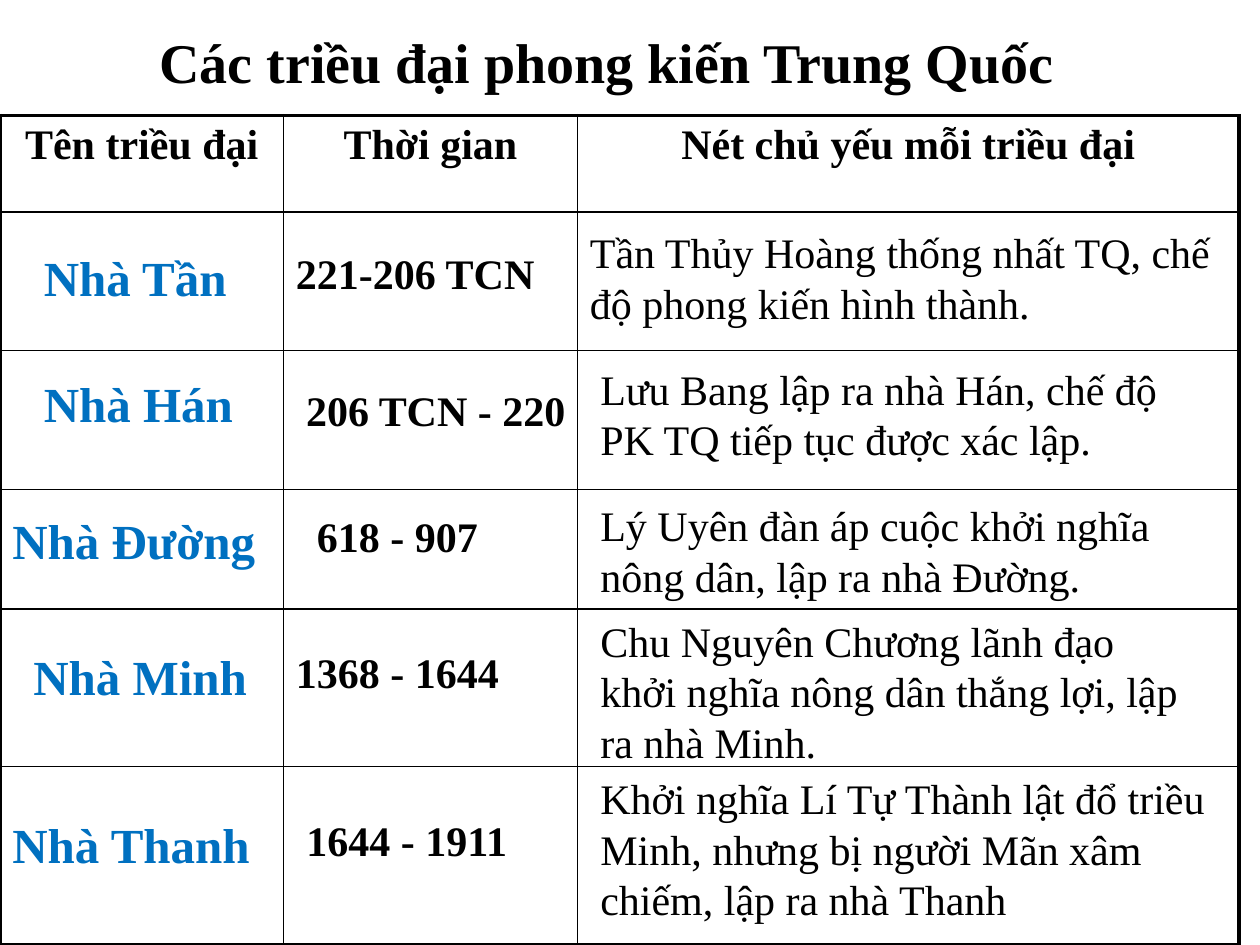
import lxml.etree
import pptx
import pptx.dml.color
import pptx.enum.text
import pptx.oxml.ns
import pptx.util

SCALE = 7620
COLORS = {"black": "000000", "blue": "0070C0"}
FONT = "Times New Roman"
ALIGN = pptx.enum.text.PP_ALIGN
TITLE = {"size": 32, "color": "black", "bold": True}
DYNASTY = {"size": 28, "color": "blue", "bold": True}
STRONG = {"size": 24, "color": "black", "bold": True}
BODY = {"size": 24, "color": "black", "bold": False}

HEADERS = ["Tên triều đại", "Thời gian", "Nét chủ yếu mỗi triều đại"]
COLUMNS = [270, 280, 630]
ROWS = [92, 132, 132, 114, 150, 170]

NAMES = [
    ("Nhà Tần", 30, 230, 230),
    ("Nhà Hán", 30, 350, 240),
    ("Nhà Đường", 0, 480, 290),
    ("Nhà Minh", 20, 610, 250),
    ("Nhà Thanh", 0, 770, 280),
]
PERIODS = [
    ("221-206 TCN", 270, 230, 270, ALIGN.LEFT),
    ("206 TCN - 220", 270, 360, 290, ALIGN.CENTER),
    ("618 - 907", 290, 480, 240, ALIGN.LEFT),
    ("1368 - 1644", 270, 610, 260, ALIGN.LEFT),
    ("1644 - 1911", 280, 770, 240, ALIGN.LEFT),
]
FEATURES = [
    ("Tần Thủy Hoàng thống nhất TQ, chế độ phong kiến hình thành.", 550, 210, 630, 109),
    ("Lưu Bang lập ra nhà Hán, chế độ PK TQ tiếp tục được xác lập.", 560, 340, 610, 109),
    ("Lý Uyên đàn áp cuộc khởi nghĩa nông dân, lập ra nhà Đường.", 560, 470, 610, 109),
    ("Chu Nguyên Chương lãnh đạo khởi nghĩa nông dân thắng lợi, lập ra nhà Minh.",
     560, 580, 590, 157),
    ("Khởi nghĩa Lí Tự Thành lật đổ triều Minh, nhưng bị người Mãn xâm chiếm, lập ra nhà Thanh",
     560, 730, 610, 157),
]


def px(length):
    return pptx.util.Emu(length * SCALE)


def write_text(frame, text, style, align=ALIGN.LEFT):
    para = frame.paragraphs[0]
    para.alignment = align
    span = para.add_run()
    span.text = text
    values = {"name": FONT, "size": pptx.util.Pt(style["size"]), "bold": style["bold"]}
    for name, value in values.items():
        setattr(span.font, name, value)
    span.font.color.rgb = pptx.dml.color.RGBColor.from_string(COLORS[style["color"]])


def add_text(page, text, left, top, width, height, style, align=ALIGN.LEFT):
    box = page.shapes.add_textbox(px(left), px(top), px(width), px(height))
    frame = box.text_frame
    frame.word_wrap = True
    frame.auto_size = pptx.enum.text.MSO_AUTO_SIZE.SHAPE_TO_FIT_TEXT
    write_text(frame, text, style, align)


def set_borders(cell, widths):
    qn = pptx.oxml.ns.qn
    properties = cell._tc.get_or_add_tcPr()
    for side, points in widths.items():
        line = lxml.etree.SubElement(
            properties, qn(f"a:ln{side}"), w=str(pptx.util.Pt(points)))
        fill = lxml.etree.SubElement(line, qn("a:solidFill"))
        lxml.etree.SubElement(fill, qn("a:srgbClr"), val=COLORS["black"])


def add_grid(page, left, top):
    frame = page.shapes.add_table(
        len(ROWS), len(COLUMNS), px(left), px(top), px(sum(COLUMNS)), px(sum(ROWS)))
    table = frame.table
    for column, width in zip(table.columns, COLUMNS):
        column.width = px(width)
    for row, height in zip(table.rows, ROWS):
        row.height = px(height)
    last_row, last_column = len(ROWS) - 1, len(COLUMNS) - 1
    for r in range(len(ROWS)):
        for c in range(len(COLUMNS)):
            cell = table.cell(r, c)
            outer = {"L": c == 0, "R": c == last_column, "T": r == 0, "B": r == last_row}
            set_borders(cell, {side: 2.25 if edge else 1 for side, edge in outer.items()})
            cell.fill.background()
    for c, header in enumerate(HEADERS):
        write_text(table.cell(0, c).text_frame, header, STRONG, ALIGN.CENTER)


def main():
    deck = pptx.Presentation()
    deck.slide_width, deck.slide_height = px(1200), px(900)
    page = deck.slides.add_slide(deck.slide_layouts[6])
    add_text(page, "Các triều đại phong kiến Trung Quốc", 140, 20, 900, 76, TITLE)
    add_grid(page, 0, 110)
    for text, left, top, width in NAMES:
        add_text(page, text, left, top, width, 68, DYNASTY)
    for text, left, top, width, align in PERIODS:
        add_text(page, text, left, top, width, 60, STRONG, align)
    for text, left, top, width, height in FEATURES:
        add_text(page, text, left, top, width, height, BODY)
    deck.save("out.pptx")


if __name__ == "__main__":
    main()
